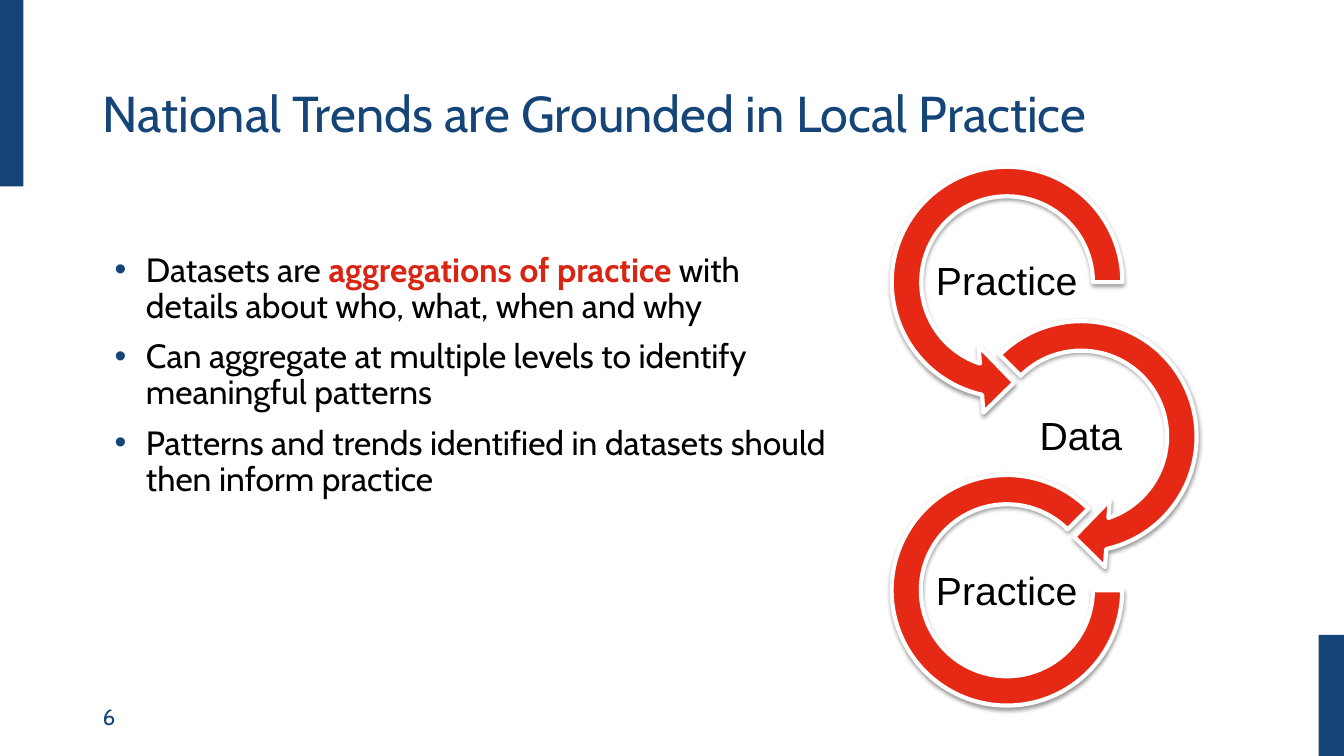
from lxml import etree
from pptx import Presentation
from pptx.dml.color import RGBColor
from pptx.enum.shapes import MSO_SHAPE
from pptx.enum.text import MSO_ANCHOR, MSO_AUTO_SIZE, PP_ALIGN
from pptx.oxml.ns import qn
from pptx.util import Cm, Pt

RECTANGLE = MSO_SHAPE.RECTANGLE
LEFT_ARROW = MSO_SHAPE.LEFT_CIRCULAR_ARROW
RIGHT_ARROW = MSO_SHAPE.CIRCULAR_ARROW
BLOCK_ARC = MSO_SHAPE.BLOCK_ARC
TOP, MIDDLE, BOTTOM = MSO_ANCHOR.TOP, MSO_ANCHOR.MIDDLE, MSO_ANCHOR.BOTTOM
LEFT, CENTER = PP_ALIGN.LEFT, PP_ALIGN.CENTER
NO_AUTOFIT = MSO_AUTO_SIZE.NONE

COLORS = {
    "navy": "154578",
    "ring": "E52915",
    "emphasis": "D92513",
    "black": "000000",
    "white": "FFFFFF",
}
MARGIN = 2.34


def color(name):
    return RGBColor.from_string(COLORS[name])


def write(box, paragraphs, size, font, anchor, align=LEFT):
    """Fill a box with paragraphs, each a list of (text, colour name, bold)."""
    frame = box.text_frame
    frame.word_wrap = True
    frame.auto_size = NO_AUTOFIT
    frame.vertical_anchor = anchor
    for index, spans in enumerate(paragraphs):
        para = frame.paragraphs[0] if index == 0 else frame.add_paragraph()
        para.alignment = align
        para.line_spacing = 0.9
        para.space_before = Pt(10 if index else 0)
        for text, color_name, bold in spans:
            span = para.add_run()
            span.text = text
            span.font.name = font
            span.font.size = Pt(size)
            span.font.bold = bold
            span.font.color.rgb = color(color_name)


deck = Presentation()
deck.slide_width, deck.slide_height = Cm(33.87), Cm(19.05)
page = deck.slides.add_slide(deck.slide_layouts[5])

# Corner bars
for left, top, width, height in [(0, 0, 0.59, 4.7), (33.23, 16, 0.64, 3.05)]:
    bar = page.shapes.add_shape(RECTANGLE, Cm(left), Cm(top), Cm(width), Cm(height))
    bar.shadow.inherit = False
    bar.fill.solid()
    bar.fill.fore_color.rgb = color("navy")
    bar.line.fill.background()

# Title and slide number
title = page.shapes.title
title.left, title.top, title.width, title.height = Cm(MARGIN), Cm(1.27), Cm(28.63), Cm(2.46)
write(title, [[("National Trends are Grounded in Local Practice", "navy", False)]],
      36, "Cabin", BOTTOM)

number = page.shapes.add_textbox(Cm(MARGIN), Cm(17.58), Cm(7.62), Cm(1.02))
write(number, [[("6", "navy", False)]], 16, "Cabin", MIDDLE)

# Bullet list
bullets = [
    [("Datasets are ", "black", False),
     ("aggregations of practice", "emphasis", True),
     (" with details about who, what, when and why", "black", False)],
    [("Can aggregate at multiple levels to identify meaningful patterns", "black", False)],
    [("Patterns and trends identified in datasets should then inform practice",
      "black", False)],
]
body = page.shapes.add_textbox(Cm(MARGIN), Cm(6.25), Cm(19.05), Cm(10.85))
write(body, bullets, 24, "Cabin", TOP)
for para in body.text_frame.paragraphs:
    properties = para._p.get_or_add_pPr()
    properties.set("marL", str(Cm(1.09)))
    properties.set("indent", str(Cm(-0.79)))
    bullet_color = etree.SubElement(properties, qn("a:buClr"))
    etree.SubElement(bullet_color, qn("a:srgbClr"), val=COLORS["navy"])
    etree.SubElement(properties, qn("a:buFont"), typeface="Arial")
    etree.SubElement(properties, qn("a:buChar"), char="•")

# Chain of rings: preset, left, top, diameter, adjustments, label, label left, label top
rings = [
    (LEFT_ARROW, 22, 3.73, 6.76, (0.11, 11.42, 63, 0, 0.125), "Practice", 23.49, 6.18),
    (RIGHT_ARROW, 23.87, 7.62, 6.76, (0.11, 11.42, 45, 135, 0.125), "Data", 25.36, 10.08),
    (BLOCK_ARC, 22.47, 11.97, 5.81, (0, 189, 0.127), "Practice", 23.49, 14),
]
for preset, left, top, diameter, adjustments, label, label_left, label_top in rings:
    ring = page.shapes.add_shape(preset, Cm(left), Cm(top), Cm(diameter), Cm(diameter))
    for index, value in enumerate(adjustments):
        ring.adjustments[index] = value
    ring.fill.solid()
    ring.fill.fore_color.rgb = color("ring")
    ring.line.color.rgb = color("white")
    ring.line.width = Pt(3)
    ring.shadow.inherit = False
    effects = ring._element.spPr.find(qn("a:effectLst"))
    shadow = etree.SubElement(effects, qn("a:outerShdw"), blurRad=str(Pt(3.1)),
                              dist=str(Pt(1.6)), dir="5400000", rotWithShape="0")
    shadow_color = etree.SubElement(shadow, qn("a:srgbClr"), val=COLORS["black"])
    etree.SubElement(shadow_color, qn("a:alpha"), val="38000")

    caption = page.shapes.add_textbox(Cm(label_left), Cm(label_top), Cm(3.76), Cm(1.88))
    frame = caption.text_frame
    frame.margin_left = frame.margin_right = Cm(0.05)
    frame.margin_top = frame.margin_bottom = Cm(0.05)
    write(caption, [[(label, "black", False)]], 28, "Arial", MIDDLE, CENTER)

deck.save("out.pptx")
